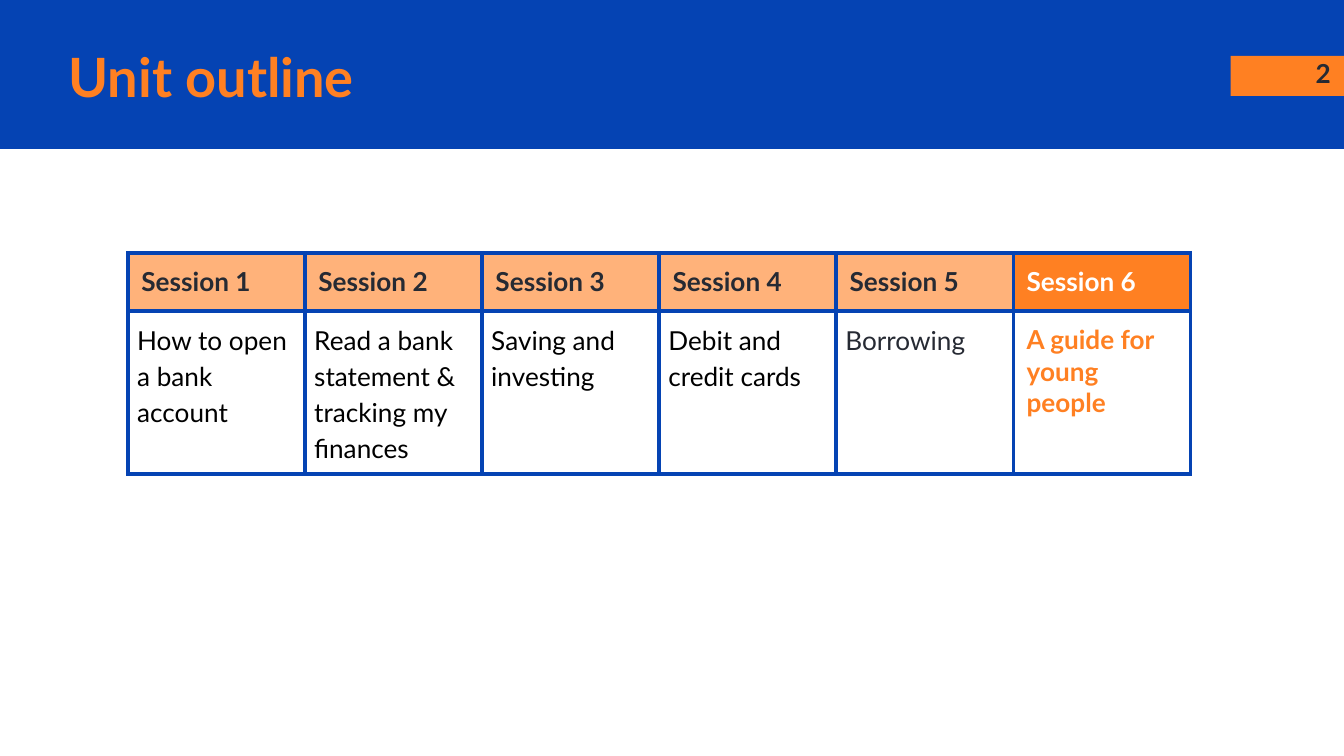
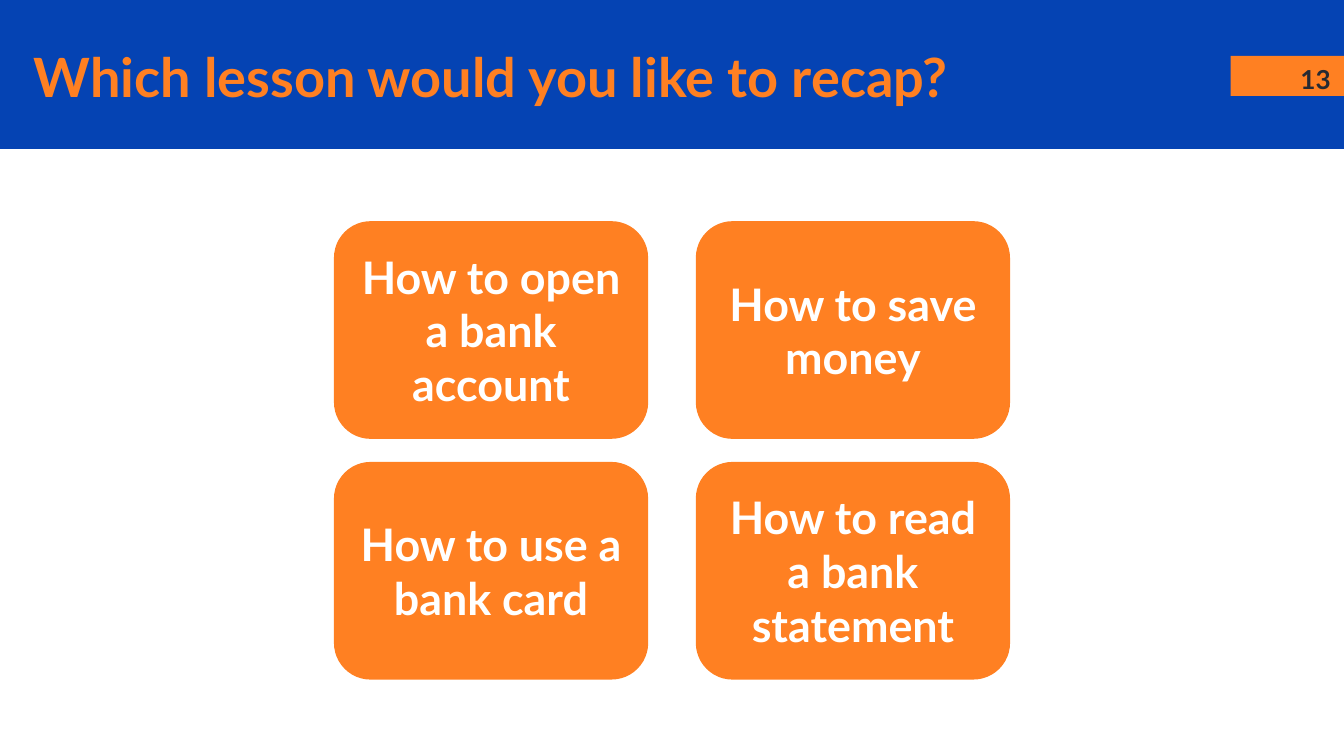
from itertools import product

from lxml.etree import SubElement
from pptx import Presentation
from pptx.dml.color import RGBColor
from pptx.enum.shapes import MSO_SHAPE as Preset
from pptx.enum.text import MSO_ANCHOR as Anchor, MSO_AUTO_SIZE as AutoSize, PP_ALIGN as Align
from pptx.oxml.ns import qn
from pptx.util import Emu, Pt

EMU_PER_PX = 4762.5  # 1920 px across 10 inches
COLORS = {
    "blue": "0543B3",
    "orange": "FF8022",
    "peach": "FFB27A",
    "ink": "262A33",
    "black": "000000",
    "white": "FFFFFF",
}
FONT = "Lato"
INSET = 19
BODY_INSET = 13
SESSIONS = [
    ("Session 1", "How to open a bank account"),
    ("Session 2", "Read a bank statement & tracking my finances"),
    ("Session 3", "Saving and investing"),
    ("Session 4", "Debit and credit cards"),
    ("Session 5", "Borrowing"),
    ("Session 6", "A guide for young people"),
]
LESSONS = [
    "How to open a bank account",
    "How to save money",
    "How to use a bank card",
    "How to read a bank statement",
]


def px(length):
    return Emu(round(length * EMU_PER_PX))


def color(name):
    return RGBColor.from_string(COLORS[name])


def set_margins(target, inset):
    """Give a text frame or a table cell the same inset on all sides."""
    target.margin_left = target.margin_right = px(inset)
    target.margin_top = target.margin_bottom = px(inset)


def write(frame, text, size, color_name, bold=True, align=Align.LEFT):
    """Write one formatted paragraph and return it."""
    frame.word_wrap = True
    paragraph = frame.paragraphs[0]
    paragraph.text = text
    paragraph.alignment = align
    font = paragraph.font
    font.name, font.size, font.bold = FONT, Pt(size), bold
    font.color.rgb = color(color_name)
    return paragraph


def add_block(slide, preset, box, fill):
    shape = slide.shapes.add_shape(preset, *map(px, box))
    shape.shadow.inherit = False
    shape.fill.solid()
    shape.fill.fore_color.rgb = color(fill)
    shape.line.fill.background()
    return shape


def add_slide(presentation, title_text, title_left, title_width, number, number_top):
    """Add a slide with the header band, title and page number."""
    slide = presentation.slides.add_slide(presentation.slide_layouts[5])
    add_block(slide, Preset.RECTANGLE, (0, 0, 1920, 213), "blue")
    add_block(slide, Preset.RECTANGLE, (1758, 80, 162, 57), "orange")

    number_box = slide.shapes.add_textbox(px(1805), px(number_top), px(115), px(80))
    set_margins(number_box.text_frame, INSET)
    write(number_box.text_frame, str(number), 14, "ink", align=Align.RIGHT)

    title = slide.shapes.title
    title.element.getparent().append(title.element)  # in front of the band
    title.left, title.top = px(title_left), px(54)
    title.width, title.height = px(title_width), px(108)
    frame = title.text_frame
    frame.auto_size = AutoSize.NONE
    frame.vertical_anchor = Anchor.MIDDLE
    set_margins(frame, INSET)
    write(frame, title_text, 29, "orange")
    return slide


def set_borders(cell, color_name, width):
    properties = cell._tc.get_or_add_tcPr()
    for side in ("a:lnL", "a:lnR", "a:lnT", "a:lnB"):
        line = SubElement(properties, qn(side), w=str(Pt(width)))
        fill = SubElement(line, qn("a:solidFill"))
        SubElement(fill, qn("a:srgbClr"), val=COLORS[color_name])


def fill_cell(cell, text, text_color, fill=None, bold=True, inset=INSET, spacing=None):
    set_borders(cell, "blue", 2.25)
    if fill:
        cell.fill.solid()
        cell.fill.fore_color.rgb = color(fill)
    else:
        cell.fill.background()
    set_margins(cell, inset)
    paragraph = write(cell.text_frame, text, 14, text_color, bold)
    if spacing:
        paragraph.line_spacing = spacing


def add_sessions_table(slide):
    """Add the session plan, with the last session as the current one."""
    column_width, row_heights = 253, (83, 233)
    count = len(SESSIONS)
    table = slide.shapes.add_table(
        2, count, px(183), px(361), px(column_width * count), px(sum(row_heights))
    ).table
    table.horz_banding = False
    for row, height in zip(table.rows, row_heights):
        row.height = px(height)
    for index, (session, topic) in enumerate(SESSIONS):
        table.columns[index].width = px(column_width)
        header, body = table.cell(0, index), table.cell(1, index)
        if index == count - 1:
            fill_cell(header, session, "white", "orange")
            fill_cell(body, topic, "orange")
        else:
            fill_cell(header, session, "ink", "peach")
            topic_color = "ink" if topic == "Borrowing" else "black"
            fill_cell(body, topic, topic_color, bold=False, inset=BODY_INSET, spacing=1.15)


def add_lesson_cards(slide):
    for lesson, (row, column) in zip(LESSONS, product(range(2), repeat=2)):
        box = (478 + 517 * column, 317 + 344 * row, 447, 309)
        card = add_block(slide, Preset.ROUNDED_RECTANGLE, box, "orange")
        card.line.color.rgb = color("orange")
        card.line.width = Pt(0.75)
        card.text_frame.vertical_anchor = Anchor.MIDDLE
        set_margins(card.text_frame, INSET)
        write(card.text_frame, lesson, 24, "white", align=Align.CENTER)


def main():
    presentation = Presentation()
    presentation.slide_width, presentation.slide_height = px(1920), px(1080)

    outline = add_slide(presentation, "Unit outline", 79, 1624, 2, 63)
    add_sessions_table(outline)

    recap = add_slide(presentation, "Which lesson would you like to recap?", 29, 1699, 13, 71)
    add_lesson_cards(recap)

    presentation.save("out.pptx")


if __name__ == "__main__":
    main()
